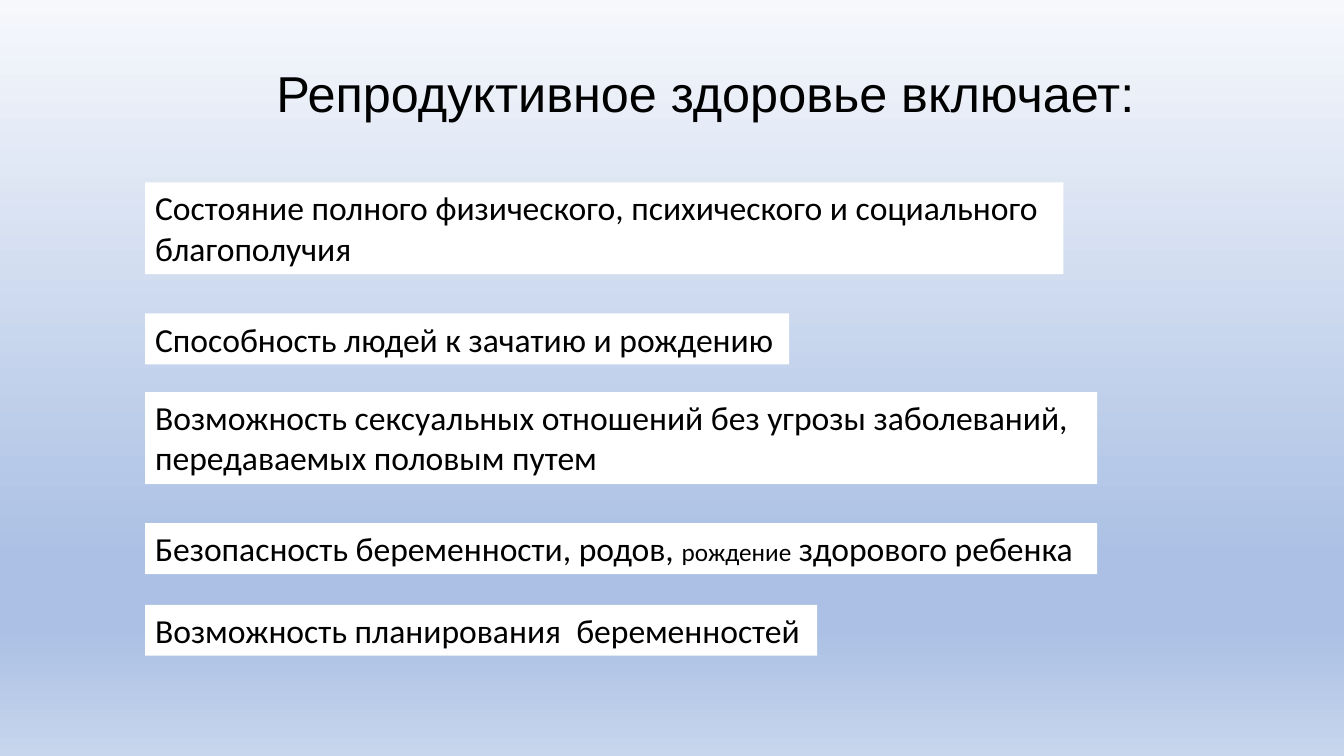
import lxml.etree
import pptx
import pptx.dml.color
import pptx.enum.text
import pptx.oxml.ns
import pptx.util

Pt = pptx.util.Pt
ALIGN = pptx.enum.text.PP_ALIGN
ANCHOR = pptx.enum.text.MSO_ANCHOR

# Content: paragraphs are lists of (text, size name)
TITLE = [[("Репродуктивное здоровье включает: ", "title")]]
STATEMENTS = [
    dict(top=130.3, width=656, wrap=False, paragraphs=[
        [("Состояние полного физического, психического и социального", "body")],
        [("благополучия", "body")]]),
    dict(top=223.9, width=460, wrap=False, paragraphs=[
        [("Способность людей к зачатию и рождению", "body")]]),
    dict(top=280.1, width=680, lines=2, paragraphs=[
        [("Возможность сексуальных отношений без угрозы заболеваний, "
          "передаваемых половым путем", "body")]]),
    dict(top=373.7, width=680, paragraphs=[
        [("Безопасность беременности, родов, ", "body"), ("рождение", "small"),
         (" здорового ребенка", "body")]]),
    dict(top=432, width=480, wrap=False, paragraphs=[
        [("Возможность планирования  беременностей", "body")]]),
]

THEME = dict(
    text="000000", panel="FFFFFF",
    background=[(0, "F6F8FC"), (74, "ABC0E4"), (83, "ABC0E4"), (100, "C7D5ED")],
    sizes=dict(title=36, body=24, small=18),
    title_font="Arial", body_font="Calibri",
)
LEFT = 103.7
PADDING, LINE_HEIGHT = 7.2, 29.2


def color(code):
    return pptx.dml.color.RGBColor.from_string(code)


def write_text(frame, paragraphs, font, align=ALIGN.LEFT, anchor=ANCHOR.TOP,
               wrap=True, spacing=None):
    frame.word_wrap = wrap
    frame.vertical_anchor = anchor
    for index, parts in enumerate(paragraphs):
        para = frame.add_paragraph() if index else frame.paragraphs[0]
        para.alignment = align
        para.line_spacing = spacing
        for text, size in parts:
            span = para.add_run()
            span.text = text
            span.font.name = font
            span.font.size = Pt(THEME["sizes"][size])
            span.font.color.rgb = color(THEME["text"])


def paint_background(page):
    fill = page.background.fill
    fill.gradient()
    fill.gradient_angle = 270
    qn = pptx.oxml.ns.qn
    stops = next(page.element.iter(qn("a:gsLst")))
    for stop in list(stops):
        stops.remove(stop)
    for percent, code in THEME["background"]:
        stop = lxml.etree.SubElement(stops, qn("a:gs"), pos=str(percent * 1000))
        lxml.etree.SubElement(stop, qn("a:srgbClr"), val=code)


def add_statement(page, top, width, paragraphs, wrap=True, lines=None):
    height = (lines or len(paragraphs)) * LINE_HEIGHT + PADDING
    box = page.shapes.add_textbox(Pt(LEFT), Pt(top), Pt(width), Pt(height))
    box.fill.solid()
    box.fill.fore_color.rgb = color(THEME["panel"])
    write_text(box.text_frame, paragraphs, THEME["body_font"], wrap=wrap)
    box.text_frame.auto_size = pptx.enum.text.MSO_AUTO_SIZE.SHAPE_TO_FIT_TEXT


def main():
    deck = pptx.Presentation()
    deck.slide_width, deck.slide_height = Pt(960), Pt(540)
    page = deck.slides.add_slide(deck.slide_layouts[5])
    paint_background(page)

    # Title
    title = page.shapes.title
    title.left, title.top, title.width, title.height = Pt(95), Pt(16.6), Pt(828), Pt(104.4)
    write_text(title.text_frame, TITLE, THEME["title_font"], align=ALIGN.CENTER,
               anchor=ANCHOR.MIDDLE, spacing=0.9)

    # White statement panels
    for statement in STATEMENTS:
        add_statement(page, **statement)

    deck.save("out.pptx")


if __name__ == "__main__":
    main()
